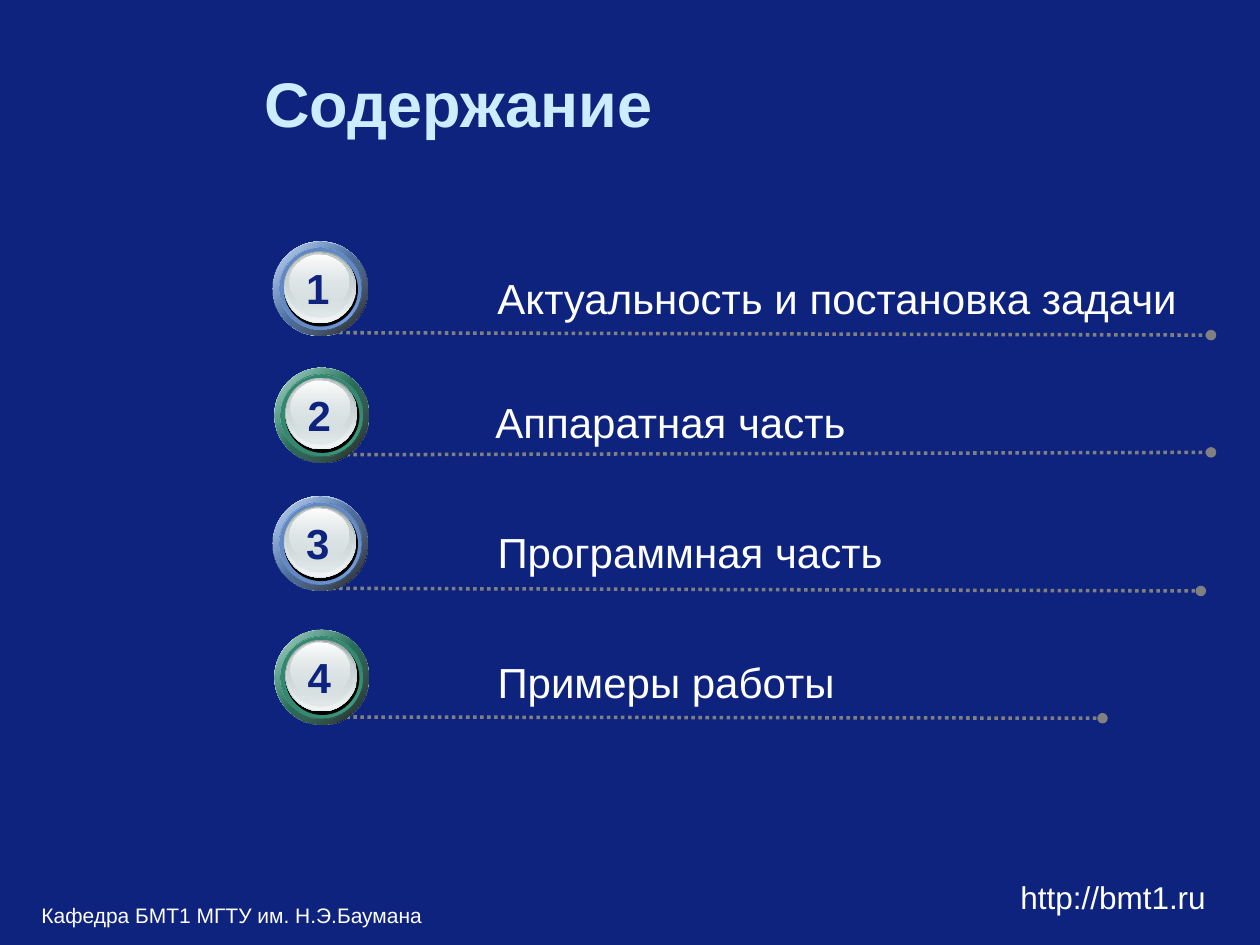
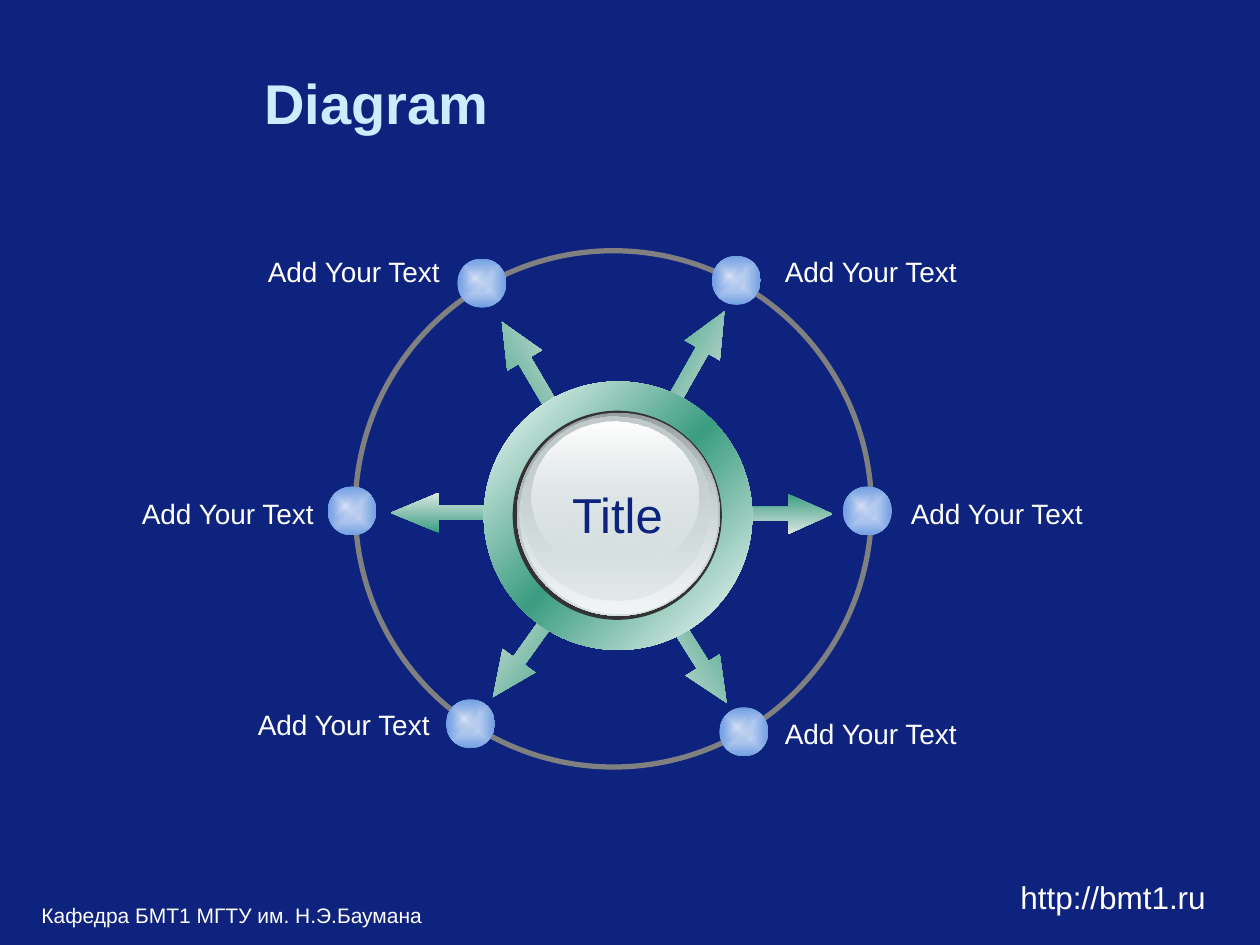
from collections import namedtuple

from lxml import etree
from pptx import Presentation
from pptx.dml.color import RGBColor
from pptx.enum.dml import MSO_LINE
from pptx.enum.shapes import MSO_CONNECTOR, MSO_SHAPE as SHAPE
from pptx.enum.text import MSO_ANCHOR as ANCHOR, MSO_AUTO_SIZE, PP_ALIGN as ALIGN
from pptx.oxml.ns import qn
from pptx.util import Pt

NAVY = RGBColor(0x0E, 0x23, 0x7E)
ICE = RGBColor(0xCC, 0xEC, 0xFF)
WHITE = RGBColor(0xFF, 0xFF, 0xFF)
BLACK = RGBColor(0, 0, 0)
CHARCOAL = RGBColor(0x33, 0x33, 0x33)
GRAY = RGBColor(0x80, 0x80, 0x80)
BLUE = RGBColor(0x70, 0x9E, 0xE2)
BLUE_DARK = RGBColor(0x56, 0x79, 0xAD)
BLUE_MID = RGBColor(0x5C, 0x82, 0xBA)
BLUE_PALE = RGBColor(0xDC, 0xE4, 0xF6)
GREEN = RGBColor(0x3B, 0x9D, 0x81)
GREEN_DARK = RGBColor(0x2D, 0x78, 0x63)
GREEN_MID = RGBColor(0x30, 0x81, 0x6A)
GREEN_PALE = RGBColor(0xDC, 0xE7, 0xE2)
STEEL = RGBColor(0x99, 0xA1, 0xA2)
SILVER = RGBColor(0xC1, 0xCB, 0xCC)
MIST = RGBColor(0xD6, 0xE1, 0xE2)
FROST = RGBColor(0xF2, 0xF5, 0xF5)

FONT = "Arial"
Tone = namedtuple("Tone", "base dark mid")
BLUE_TONE = Tone(BLUE, BLUE_DARK, BLUE_MID)
GREEN_TONE = Tone(GREEN, GREEN_DARK, GREEN_MID)

# stops are (position %, colour, opacity %); no angle means a gradient from the centre
Gradient = namedtuple("Gradient", "stops angle")


def blend(start, end, angle, start_alpha=100, end_alpha=100):
    return Gradient([(0, start, start_alpha), (100, end, end_alpha)], angle)


def band(edge, middle, angle):
    return Gradient([(0, edge, 100), (50, middle, 100), (100, edge, 100)], angle)


# x, y, width and height as shares of the disc, then the fill
GLASS_LAYERS = [
    (0.02, 0.01, 0.97, 0.97, blend(STEEL, MIST, 90)),
    (0.03, 0.02, 0.95, 0.95, blend(MIST, FROST, 90, 0)),
    (0.04, 0.03, 0.90, 0.88, blend(SILVER, MIST, 90, 100, 48)),
    (0.09, 0.05, 0.80, 0.72, blend(WHITE, MIST, 90, 100, 38)),
]


class Deck:
    def __init__(self):
        self.prs = Presentation()
        self.prs.slide_width, self.prs.slide_height = Pt(720), Pt(540)
        fill = self.prs.slide_master.background.fill
        fill.solid()
        fill.fore_color.rgb = NAVY

    def new_slide(self, title, size):
        self.s = self.prs.slides.add_slide(self.prs.slide_layouts[6])
        self.text(title, 144, 36, 546, 44.6, size, ICE, bold=True,
                  anchor=ANCHOR.MIDDLE)

    def footer(self):
        self.text("Кафедра БМТ1 МГТУ им. Н.Э.Баумана", 16.6, 512, 422, 24, 12)
        self.text("http://bmt1.ru", 468, 498.2, 228.2, 18, 18, align=ALIGN.RIGHT)

    def group(self):
        return self.s.shapes.add_group_shape()

    def text(self, text, x, y, w, h, size, color=WHITE, bold=False,
             align=ALIGN.LEFT, anchor=ANCHOR.TOP, wrap=True, parent=None):
        sp = (parent or self.s).shapes.add_textbox(Pt(x), Pt(y), Pt(w), Pt(h))
        tf = sp.text_frame
        tf.word_wrap = wrap
        tf.auto_size = MSO_AUTO_SIZE.NONE if wrap else MSO_AUTO_SIZE.SHAPE_TO_FIT_TEXT
        tf.vertical_anchor = anchor
        tf.text = text
        p = tf.paragraphs[0]
        p.alignment = align
        font = p.runs[0].font
        font.name, font.size, font.bold = FONT, Pt(size), bold
        font.color.rgb = color

    def shape(self, kind, x, y, w, h, fill=None, line=None, parent=None):
        sp = (parent or self.s).shapes.add_shape(kind, Pt(x), Pt(y), Pt(w), Pt(h))
        sp.shadow.inherit = False
        if isinstance(fill, RGBColor):
            sp.fill.solid()
            sp.fill.fore_color.rgb = fill
        else:
            sp.fill.background()
            if fill:
                self.apply_gradient(sp, fill)
        if line:
            sp.line.color.rgb, sp.line.width = line, Pt(3)
        else:
            sp.line.fill.background()
        return sp

    def apply_gradient(self, sp, gradient):
        """Put the gradient, with its opacities, in place of the empty fill."""
        sp_pr = sp._element.spPr
        grad = etree.Element(qn("a:gradFill"), rotWithShape="1")
        stops = etree.SubElement(grad, qn("a:gsLst"))
        for pos, color, alpha in gradient.stops:
            gs = etree.SubElement(stops, qn("a:gs"), pos=str(pos * 1000))
            clr = etree.SubElement(gs, qn("a:srgbClr"), val=str(color))
            if alpha < 100:
                etree.SubElement(clr, qn("a:alpha"), val=str(alpha * 1000))
        if gradient.angle is None:
            center = etree.SubElement(grad, qn("a:path"), {"path": "shape"})
            etree.SubElement(center, qn("a:fillToRect"),
                             {side: "50000" for side in "ltrb"})
        else:
            etree.SubElement(grad, qn("a:lin"), ang=str(gradient.angle * 60000),
                             scaled="1")
        sp_pr.replace(sp_pr.find(qn("a:noFill")), grad)

    def circle(self, x, y, d, fill=None, line=None, parent=None):
        return self.shape(SHAPE.OVAL, x, y, d, d, fill, line, parent)

    def glass(self, x, y, d, parent=None):
        """Stack the shiny layers of a glass button of diameter d."""
        for dx, dy, w, h, fill in GLASS_LAYERS:
            self.shape(SHAPE.OVAL, x + dx * d, y + dy * d, w * d, h * d, fill,
                       parent=parent)

    def badge(self, number, x, y, tone):
        grp = self.group()
        self.circle(x, y, 54, band(WHITE, tone.base, 45), parent=grp)
        self.circle(x, y, 54, blend(tone.base, BLACK, 45, 32, 90), parent=grp)
        self.circle(x + 3.6, y + 3.6, 46.8, band(tone.dark, tone.base, 315), parent=grp)
        self.circle(x + 3.6, y + 3.6, 46.8, blend(tone.mid, tone.base, 45, 100, 0),
                    parent=grp)
        self.circle(x + 6.3, y + 6.3, 42.3, BLACK, parent=grp)
        self.glass(x + 5.5, y + 5.1, 42.3, grp)
        self.text(str(number), x + 11.6, y + 8.6, 28, 36, 24, NAVY, bold=True,
                  align=ALIGN.CENTER, wrap=False, parent=grp)

    def dotted_line(self, x1, y1, x2, y2):
        cx = self.s.shapes.add_connector(MSO_CONNECTOR.STRAIGHT,
                                         Pt(x1), Pt(y1), Pt(x2), Pt(y2))
        cx.line.color.rgb, cx.line.width = GRAY, Pt(2)
        cx.line.dash_style = MSO_LINE.ROUND_DOT
        etree.SubElement(cx.line._get_or_add_ln(), qn("a:tailEnd"), type="oval")
        etree.SubElement(cx._element.spPr, qn("a:effectLst"))

    def orb(self, x, y):
        grp = self.group()
        self.circle(x, y, 28, blend(BLUE_PALE, BLUE, None), parent=grp)
        self.circle(x + 1.2, y + 2.6, 17.6, blend(BLUE_PALE, BLUE, None, 100, 0),
                    parent=grp)

    def arrow(self, x, y, w, rotation):
        sp = self.shape(SHAPE.RIGHT_ARROW, x, y, w, 23, blend(GREEN, GREEN_PALE, 90))
        sp.adjustments[0], sp.adjustments[1] = 0.35, w / 56.4
        sp.rotation = rotation


def contents_slide(deck):
    deck.new_slide("Содержание", 36)
    # text, label x, y and width, badge y, line start y, line end x and y
    topics = [
        ("Актуальность и постановка задачи", 277.2, 152, 420.5, 138, 190.1, 692, 191.5),
        ("Аппаратная часть", 276, 223.2, 223.2, 210.2, 259.9, 692, 258.5),
        ("Программная часть", 277.2, 297.4, 237, 283.5, 336.2, 686.2, 337.7),
        ("Примеры работы", 277.2, 371.5, 209, 360, 409.7, 630, 410.4),
    ]
    for i, (text, x, y, w, badge_y, y1, x2, y2) in enumerate(topics):
        deck.dotted_line(185.8, y1, x2, y2)
        deck.text(text, x, y, w, 36, 24, wrap=False)
        tone = GREEN_TONE if i % 2 else BLUE_TONE
        deck.badge(i + 1, 156.8 if i % 2 else 156, badge_y, tone)
    deck.footer()


def diagram_slide(deck):
    deck.new_slide("Diagram", 32)
    arrows = [
        (367.2, 193.7, 62.6, 299.6), (367.2, 363.6, 62.6, 57.8),
        (271.4, 199.4, 62.6, 239.5), (268.6, 361.4, 62.6, 125.6),
        (413.3, 282.2, 62.6, 0), (223.2, 281.5, 67.7, 180),
    ]
    for arrow in arrows:
        deck.arrow(*arrow)
    deck.circle(203, 143.3, 295, line=GRAY)

    # orb x and y, label x and y, label alignment
    spokes = [
        (261.4, 147.8, 141.8, 141.8, ALIGN.RIGHT),
        (187.2, 278, 69.8, 280, ALIGN.RIGHT),
        (254.9, 399.6, 136, 401, ALIGN.RIGHT),
        (406.8, 146.2, 441.4, 141.8, ALIGN.LEFT),
        (481.7, 278, 513.4, 280, ALIGN.LEFT),
        (411.1, 404.2, 441.4, 406, ALIGN.LEFT),
    ]
    for orb_x, orb_y, x, y, align in spokes:
        deck.orb(orb_x, orb_y)
        deck.text("Add Your Text", x, y, 116.6, 26.6, 16, align=align, wrap=False)

    deck.circle(276.5, 218, 153.4, band(WHITE, GREEN, 45))
    deck.circle(293, 234.7, 119.5, CHARCOAL)
    deck.glass(293, 234.7, 119.5)
    deck.text("Title", 319, 273.6, 67.7, 41, 28, NAVY, align=ALIGN.CENTER, wrap=False)
    deck.footer()


def main():
    deck = Deck()
    contents_slide(deck)
    diagram_slide(deck)
    deck.prs.save("out.pptx")


if __name__ == "__main__":
    main()
